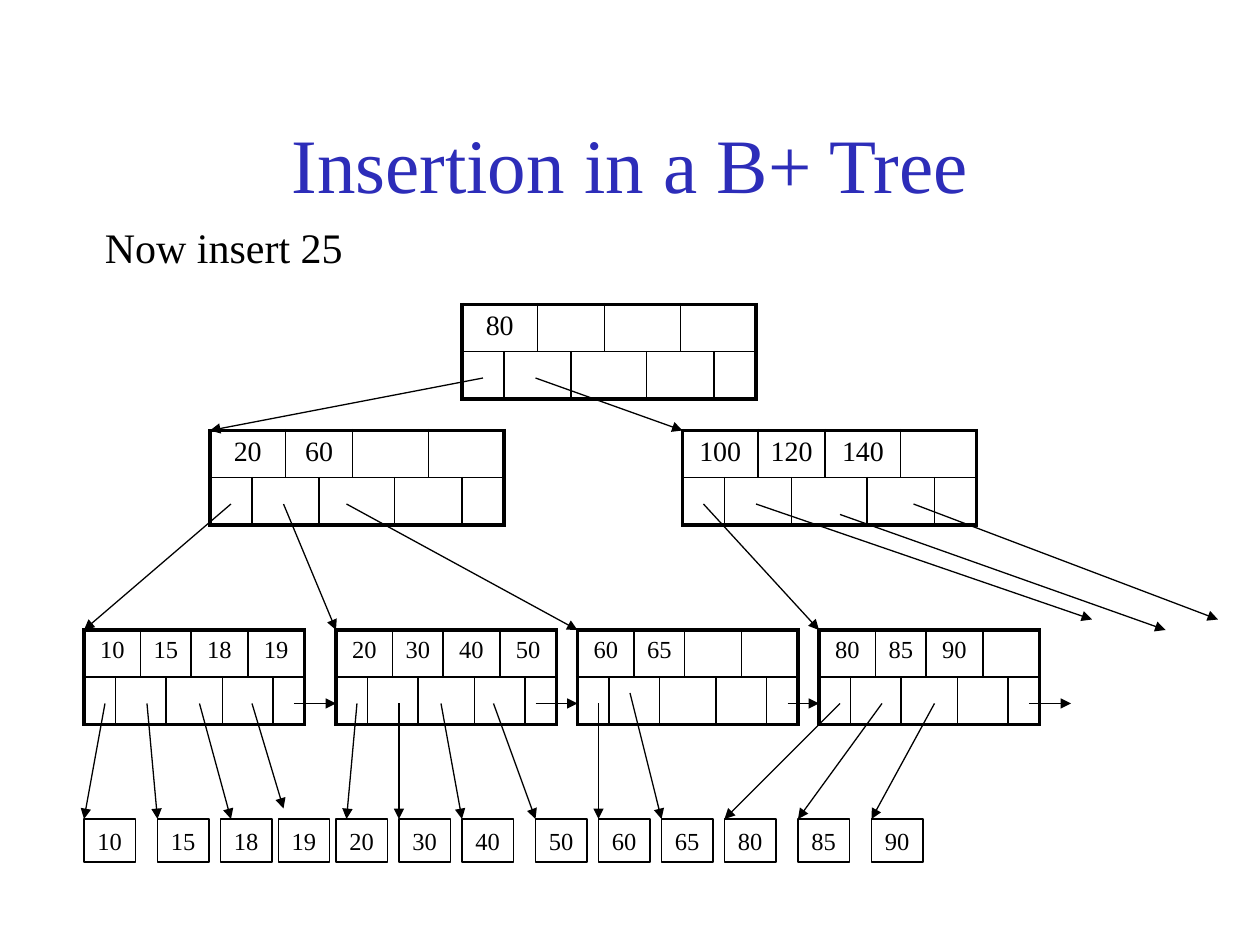
from dataclasses import dataclass

from pptx import Presentation
from pptx.dml.color import RGBColor
from pptx.enum.shapes import MSO_CONNECTOR, MSO_SHAPE
from pptx.enum.text import MSO_ANCHOR, MSO_AUTO_SIZE, PP_ALIGN
from pptx.oxml.ns import qn
from pptx.util import Emu, Pt
from lxml.etree import SubElement

EMU_PER_PX = 7620  # 120 px to the inch


@dataclass(frozen=True)
class Theme:
    font: str = "Times New Roman"
    title_color: str = "2D2DB9"
    ink: str = "000000"
    title_size: int = 44
    caption_size: int = 24
    inner_size: int = 16
    leaf_size: int = 14
    thin: float = 0.75
    grid: float = 1
    frame: float = 2.25


THEME = Theme()

# Columns covered by each key (top row) and each pointer (bottom row)
KEY_SPANS = [(0, 1), (2, 3), (4, 5), (6, 7)]
POINTER_SPANS = [(0, 0), (1, 2), (3, 4), (5, 6), (7, 7)]
INNER_COLUMNS = [40, 32, 32, 32, 40, 32, 32, 40]
LEAF_COLUMNS = [30, 24, 24, 24, 30, 24, 24, 30]
ROW_HEIGHT = 45

INNER_NODES = [
    (440, 290, ["80"]),
    (200, 410, ["20", "60"]),
    (650, 410, ["100", "120", "140"]),
]
LEAF_TOP = 600
LEAF_NODES = [
    (80, ["10", "15", "18", "19"]),
    (320, ["20", "30", "40", "50"]),
    (550, ["60", "65"]),
    (780, ["80", "85", "90"]),
]

# Child pointers: start and end points
CHILD_ARROWS = [
    ((460, 360), (200, 410)), ((510, 360), (650, 410)),
    ((220, 480), (80, 600)), ((270, 480), (320, 600)), ((330, 480), (550, 600)),
    ((670, 480), (780, 600)), ((720, 480), (1040, 590)),
    ((800, 490), (1110, 600)), ((870, 480), (1160, 590)),
]

# Links from each leaf to the next: start x, end x
POINTER_Y = 670
SIBLING_LINKS = [(280, 320), (510, 550), (750, 780), (980, 1020)]

# Records: key, box left, arrow start, arrow end
RECORD_TOP = 780
RECORDS = [
    ("10", 80, (100, 670), (80, 780)),
    ("15", 150, (140, 670), (150, 780)),
    ("18", 210, (190, 670), (220, 780)),
    ("19", 265, (240, 670), (270, 770)),
    ("20", 320, (340, 670), (330, 780)),
    ("30", 380, (380, 670), (380, 780)),
    ("40", 440, (420, 670), (440, 780)),
    ("50", 510, (470, 670), (510, 780)),
    ("60", 570, (570, 670), (570, 780)),
    ("65", 630, (600, 660), (630, 780)),
    ("80", 690, (800, 670), (690, 780)),
    ("85", 760, (840, 670), (760, 780)),
    ("90", 830, (890, 670), (830, 780)),
]


def px(*lengths):
    return [Emu(length * EMU_PER_PX) for length in lengths]


def write(text_frame, text, size, color=THEME.ink, align=PP_ALIGN.CENTER):
    text_frame.text = text
    para = text_frame.paragraphs[0]
    para.alignment = align
    for span in para.runs:
        span.font.name = THEME.font
        span.font.size = Pt(size)
        span.font.bold = False
        span.font.color.rgb = RGBColor.from_string(color)


def add_title(page, text):
    title = page.shapes.title
    title.left, title.top, title.width, title.height = px(90, 80, 1020, 150)
    title.text_frame.vertical_anchor = MSO_ANCHOR.MIDDLE
    write(title.text_frame, text, THEME.title_size, THEME.title_color)


def add_caption(page, text):
    frame = page.shapes.add_textbox(*px(88, 205, 251, 60)).text_frame
    frame.word_wrap = False
    frame.auto_size = MSO_AUTO_SIZE.SHAPE_TO_FIT_TEXT
    write(frame, text, THEME.caption_size, align=PP_ALIGN.LEFT)


def set_borders(cell, widths):
    """Widths in points run left, right, top, bottom."""
    properties = cell._tc.get_or_add_tcPr()
    for side, width in zip("LRTB", widths):
        line = SubElement(properties, qn(f"a:ln{side}"), w=str(Pt(width)))
        SubElement(SubElement(line, qn("a:solidFill")), qn("a:srgbClr"), val=THEME.ink)


def add_node(page, left, top, keys, columns, size):
    frame = page.shapes.add_table(
        2, len(columns), *px(left, top, sum(columns), 2 * ROW_HEIGHT))
    table = frame.table
    table.first_row = table.horz_banding = False
    for column, width in zip(table.columns, columns):
        column.width = px(width)[0]
    for row in table.rows:
        row.height = px(ROW_HEIGHT)[0]

    # Merge the cells and draw a heavy frame around a light grid
    last = len(columns) - 1
    for row, spans in enumerate([KEY_SPANS, POINTER_SPANS]):
        for first, final in spans:
            cell = table.cell(row, first)
            if final > first:
                cell.merge(table.cell(row, final))
            on_frame = [first == 0, final == last, row == 0, row == 1]
            set_borders(cell, [THEME.frame if edge else THEME.grid for edge in on_frame])

    # Empty cells take the same type size, so that rows keep their height
    for cell in table.iter_cells():
        cell.fill.background()
        cell.margin_left = cell.margin_right = 0
        para = cell.text_frame.paragraphs[0]
        SubElement(para._p, qn("a:endParaRPr"), sz=str(size * 100))
    for key, (first, final) in zip(keys, KEY_SPANS):
        write(table.cell(0, first).text_frame, key, size)


def add_arrow(page, start, end):
    arrow = page.shapes.add_connector(MSO_CONNECTOR.STRAIGHT, *px(*start, *end))
    arrow.line.width = Pt(THEME.thin)
    arrow.line.color.rgb = RGBColor.from_string(THEME.ink)
    SubElement(arrow.line._get_or_add_ln(), qn("a:tailEnd"), type="triangle")
    SubElement(arrow._element.spPr, qn("a:effectLst"))


def add_record(page, key, left):
    box = page.shapes.add_shape(MSO_SHAPE.RECTANGLE, *px(left, RECORD_TOP, 49, 41))
    box.shadow.inherit = False
    box.fill.background()
    box.line.width = Pt(THEME.thin)
    box.line.color.rgb = RGBColor.from_string(THEME.ink)
    frame = box.text_frame
    frame.word_wrap = False
    frame.auto_size = MSO_AUTO_SIZE.SHAPE_TO_FIT_TEXT
    frame.vertical_anchor = MSO_ANCHOR.MIDDLE
    write(frame, key, THEME.leaf_size)


def main():
    deck = Presentation()
    deck.slide_width, deck.slide_height = px(1200, 900)
    page = deck.slides.add_slide(deck.slide_layouts[5])
    add_title(page, "Insertion in a B+ Tree")
    add_caption(page, "Now insert 25")

    # Tree nodes
    for left, top, keys in INNER_NODES:
        add_node(page, left, top, keys, INNER_COLUMNS, THEME.inner_size)
    for left, keys in LEAF_NODES:
        add_node(page, left, LEAF_TOP, keys, LEAF_COLUMNS, THEME.leaf_size)

    # Pointers between nodes
    for start, end in CHILD_ARROWS:
        add_arrow(page, start, end)
    for start, end in SIBLING_LINKS:
        add_arrow(page, (start, POINTER_Y), (end, POINTER_Y))

    # Records under the leaves
    for key, left, start, end in RECORDS:
        add_record(page, key, left)
        add_arrow(page, start, end)

    deck.save("out.pptx")


if __name__ == "__main__":
    main()
